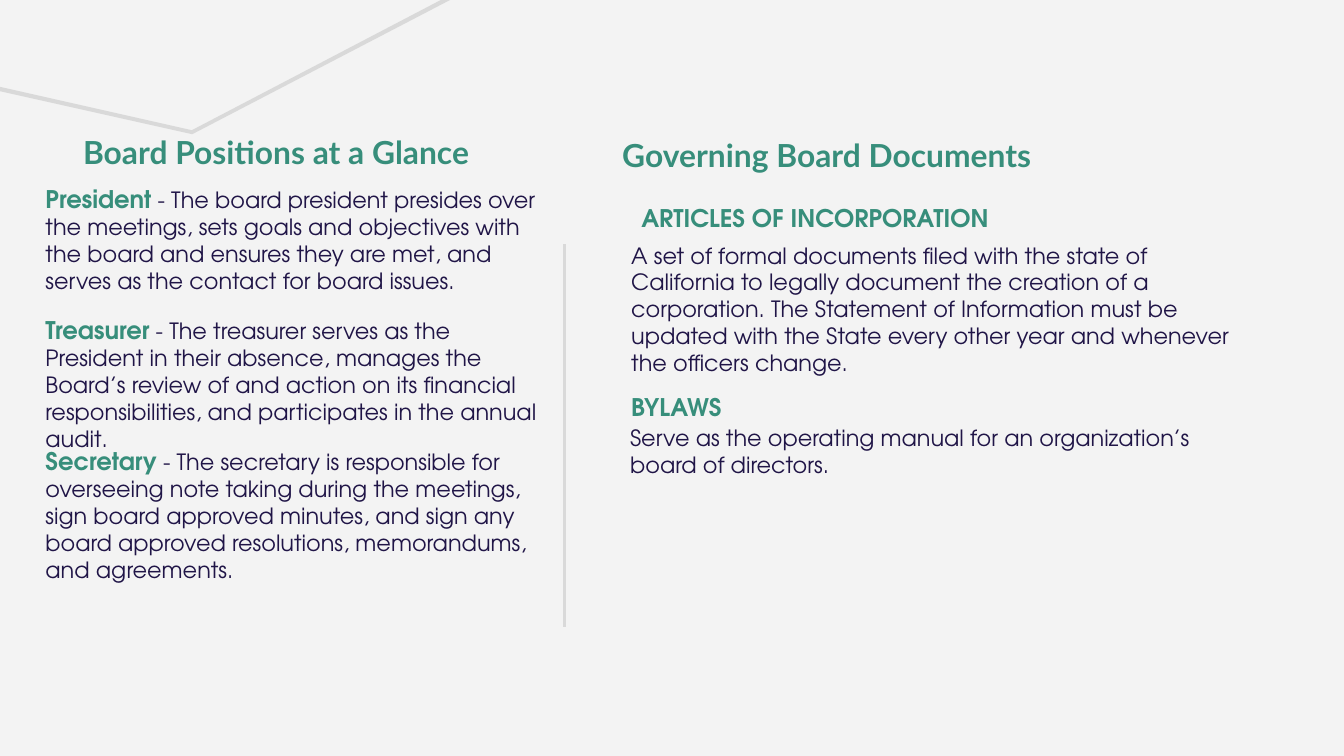
from dataclasses import dataclass
from typing import NamedTuple

from lxml import etree
from pptx import Presentation
from pptx import util as u
from pptx.dml.color import RGBColor
from pptx.enum import shapes, text
from pptx.oxml import ns

BACKGROUND = RGBColor(0xF3, 0xF3, 0xF3)
RULE_GRAY = RGBColor(0xD9, 0xD9, 0xD9)
GREEN = RGBColor(0x37, 0x8E, 0x7B)
NAVY = RGBColor(0x20, 0x15, 0x47)

TITLE = {"name": "Lato", "size": u.Pt(17), "bold": True}
HEADING = {"name": "TeX Gyre Adventor", "size": u.Pt(13), "bold": True}
BODY = {"name": "TeX Gyre Adventor", "size": u.Pt(12), "bold": False}

TOP, MIDDLE, BOTTOM = (
    text.MSO_ANCHOR.TOP,
    text.MSO_ANCHOR.MIDDLE,
    text.MSO_ANCHOR.BOTTOM,
)
LEFT, RIGHT = text.PP_ALIGN.LEFT, text.PP_ALIGN.RIGHT

POSITION_TOP, POSITION_STEP = 3.23, 2.48
LINE_WIDTH = u.Pt(1.5)


class Run(NamedTuple):
    words: str
    style: dict
    color: RGBColor


@dataclass
class TextBlock:
    """A text box; lengths are in centimetres."""

    left: float
    top: float
    width: float
    height: float
    runs: list[Run]
    anchor: text.MSO_ANCHOR = TOP
    alignment: text.PP_ALIGN = LEFT


POSITIONS = [
    ("President", " - The board president presides over the meetings, sets goals and "
     "objectives with the board and ensures they are met, and serves as the contact "
     "for board issues."),
    ("Treasurer", " - The treasurer serves as the President in their absence, manages "
     "the Board’s review of and action on its financial responsibilities, and "
     "participates in the annual audit."),
    ("Secretary", " - The secretary is responsible for overseeing note taking during "
     "the meetings, sign board approved minutes, and sign any board approved "
     "resolutions, memorandums, and agreements."),
]

DOCUMENT_BLOCKS = [
    TextBlock(11.66, 7.19, 11.18, 2.69, [Run(
        "Serve as the operating manual for an organization’s board of directors.",
        BODY, NAVY)], MIDDLE),
    TextBlock(11.51, 2.84, 7.42, 1.8,
              [Run("ARTICLES OF INCORPORATION", HEADING, GREEN)], BOTTOM, RIGHT),
    TextBlock(11.68, 4.32, 12.09, 2.69, [Run(
        "A set of formal documents filed with the state of California to legally "
        "document the creation of a corporation. The Statement of Information must be "
        "updated with the State every other year and whenever the officers change.",
        BODY, NAVY)]),
    TextBlock(11.51, 2.51, 11.13, 1.02,
              [Run("Governing Board Documents", TITLE, GREEN)], BOTTOM),
    TextBlock(11.68, 7.19, 3.51, 1.02, [Run("BYLAWS", HEADING, GREEN)], BOTTOM),
]

POSITION_BLOCKS = [
    TextBlock(1.32, 2.26, 8.28, 1.24, [Run("Board Positions at a Glance", TITLE, GREEN)])
] + [
    TextBlock(0.61, POSITION_TOP + row * POSITION_STEP, 10.06, 2.69,
              [Run(name, HEADING, GREEN), Run(duties, BODY, NAVY)])
    for row, (name, duties) in enumerate(POSITIONS)
]


def add_text_block(slide, block: TextBlock) -> None:
    box = slide.shapes.add_textbox(
        u.Cm(block.left), u.Cm(block.top), u.Cm(block.width), u.Cm(block.height))
    frame_format = {
        "word_wrap": True,
        "vertical_anchor": block.anchor,
        **{f"margin_{side}": u.Cm(0.25) for side in ("left", "top", "right", "bottom")},
    }
    for attribute, value in frame_format.items():
        setattr(box.text_frame, attribute, value)
    paragraph = box.text_frame.paragraphs[0]
    paragraph.alignment = block.alignment
    for words, style, color in block.runs:
        run = paragraph.add_run()
        run.text = words
        for attribute, value in style.items():
            setattr(run.font, attribute, value)
        run.font.color.rgb = color


def style_line(shape) -> None:
    shape.line.color.rgb = RULE_GRAY
    shape.line.width = LINE_WIDTH


def add_corner_stroke(slide) -> None:
    """Draw the thin bent band across the top left corner."""
    points = [(10.13, -0.91), (3.63, 2.49), (-0.66, 1.52),
              (-0.66, 1.55), (3.63, 2.51), (10.16, -0.89)]
    start, *others = [(u.Cm(x), u.Cm(y)) for x, y in points]
    builder = slide.shapes.build_freeform(*start)
    builder.add_line_segments(others, close=True)
    stroke = builder.convert_to_shape()
    stroke.shadow.inherit = False
    stroke.fill.solid()
    stroke.fill.fore_color.rgb = RULE_GRAY
    style_line(stroke)


def add_column_divider(slide) -> None:
    x = u.Cm(10.67)
    divider = slide.shapes.add_connector(
        shapes.MSO_CONNECTOR.STRAIGHT, x, u.Cm(4.62), x, u.Cm(11.86))
    style_line(divider)
    etree.SubElement(divider._element.spPr, ns.qn("a:effectLst"))


def main() -> None:
    presentation = Presentation()
    presentation.slide_width = u.Cm(25.4)
    presentation.slide_height = u.Cm(14.29)
    slide = presentation.slides.add_slide(presentation.slide_layouts[6])
    slide.background.fill.solid()
    slide.background.fill.fore_color.rgb = BACKGROUND
    add_corner_stroke(slide)
    add_column_divider(slide)
    for block in DOCUMENT_BLOCKS + POSITION_BLOCKS:
        add_text_block(slide, block)
    presentation.save("out.pptx")


if __name__ == "__main__":
    main()
